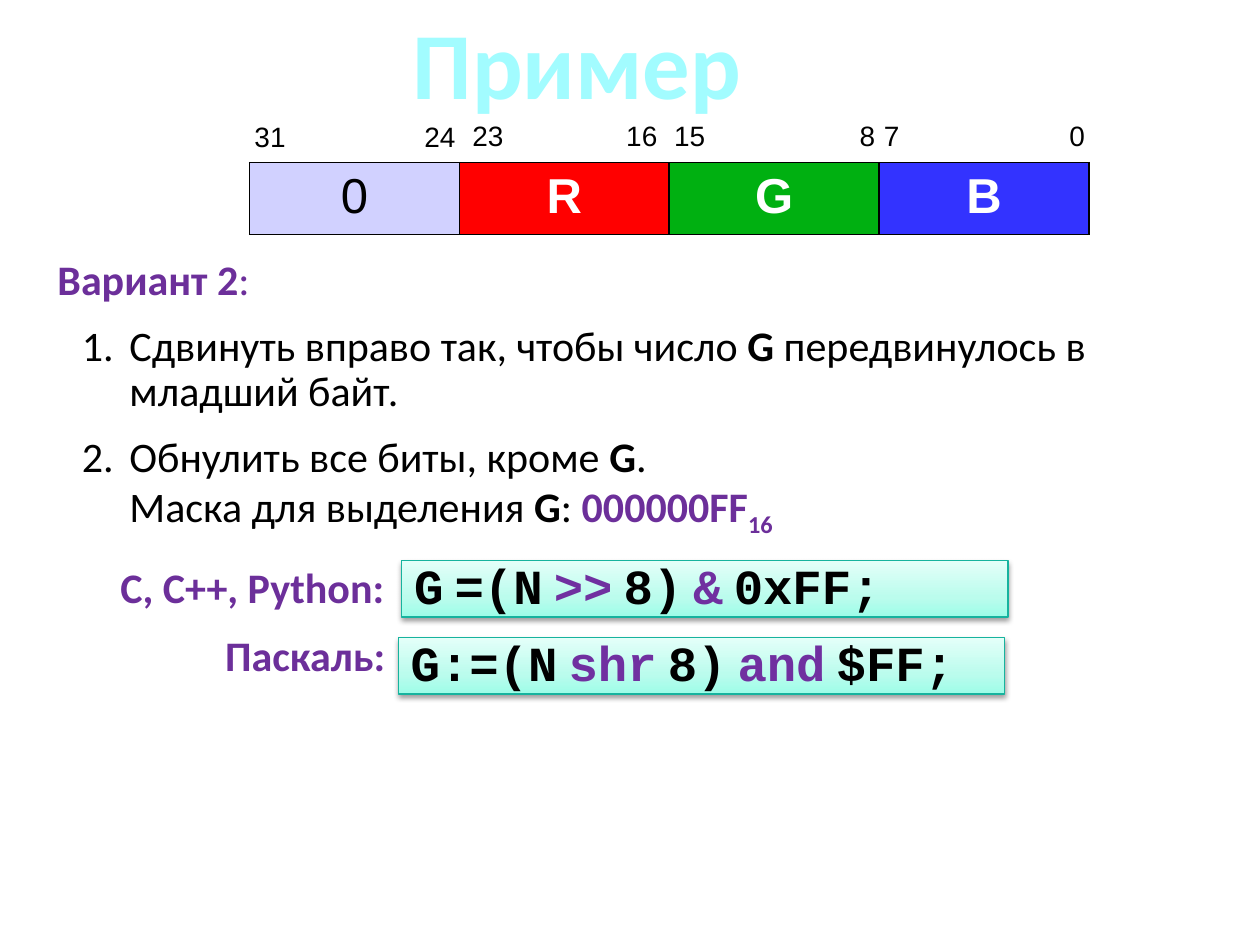
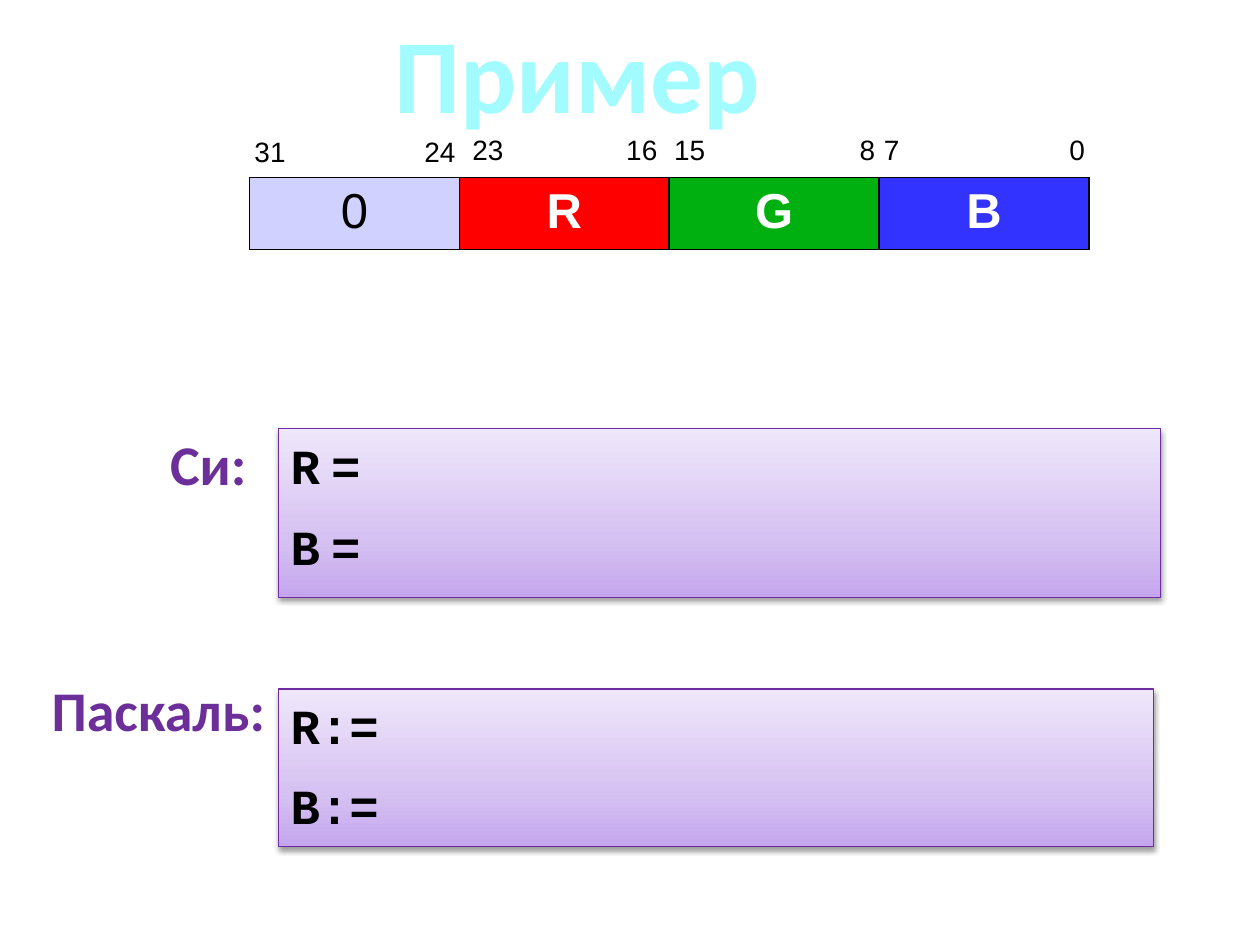
"""Two slides on extracting colour bytes from a 32-bit number."""
from dataclasses import dataclass

from lxml import etree
from pptx import Presentation
from pptx.dml.color import RGBColor
from pptx.enum.shapes import MSO_SHAPE as Preset
from pptx.enum.text import MSO_ANCHOR as Anchor, PP_ALIGN as Align
from pptx.oxml import parse_xml
from pptx.oxml.ns import nsdecls, qn
from pptx.util import Cm, Pt

COLORS = {
    "ink": "000000",
    "white": "FFFFFF",
    "heading": "6C2F9A",
    "operator": "7030A0",
    "title_edge": "3DBDC0",
    "unused": "D1D1FF",
    "red": "FF0000",
    "green": "00B011",
    "blue": "3333FF",
    "teal_edge": "16B39E",
    "violet_edge": "6E2C9F",
}
TITLE_STOPS = [(0, "BBFCFE"), (9, "A2FCFF"), (50, "008285"), (79, "A2FCFF"), (100, "BBFCFE")]
TEAL_STOPS = [(0, "9DFDE8"), (35, "BBFCED"), (100, "E4FFF9")]
VIOLET_STOPS = [(0, "C5A6EE"), (35, "D6C2F2"), (100, "EFE7FB")]
OPERATORS = {">>", "&", "shr", "and"}
PLAIN_TABLE = "{2D5ABB26-0587-4C30-8999-92F81FD0307C}"
BYTE_WIDTH = 4.23


@dataclass(frozen=True)
class Area:
    left: float
    top: float
    width: float
    height: float

    def lengths(self) -> tuple:
        return Cm(self.left), Cm(self.top), Cm(self.width), Cm(self.height)


@dataclass(frozen=True)
class ByteField:
    letter: str
    fill: str
    high: str
    low: str
    inset: float = 0.08


@dataclass(frozen=True)
class Label:
    text: str
    area: Area
    size: int
    align: Align


@dataclass(frozen=True)
class Code:
    lines: tuple
    area: Area
    stops: list
    edge: str
    anchor: Anchor = Anchor.TOP
    pad: float = 0.13
    gap: float = 0
    spacing: float = 0.9


FIELDS = [
    ByteField("0", "unused", "31", "24"),
    ByteField("R", "red", "23", "16", 0.24),
    ByteField("G", "green", "15", "8"),
    ByteField("B", "blue", "7", "0"),
]


def gradient(stops: list, degrees: int) -> etree._Element:
    """Return a linear gradient fill."""
    marks = "".join(
        f'<a:gs pos="{place * 1000}"><a:srgbClr val="{color}"/></a:gs>' for place, color in stops
    )
    return parse_xml(
        f'<a:gradFill {nsdecls("a")} rotWithShape="1"><a:gsLst>{marks}</a:gsLst>'
        f'<a:lin ang="{degrees * 60000}" scaled="0"/></a:gradFill>'
    )


def add_run(paragraph, text: str, size: float, color: str = "ink", bold: bool = False,
            face: str = "Calibri"):
    """Append one formatted run."""
    run = paragraph.add_run()
    run.text = text
    run.font.size = Pt(size)
    run.font.bold = bold
    run.font.name = face
    run.font.color.rgb = RGBColor.from_string(COLORS[color])
    return run


def add_text_frame(slide, area: Area, wrap: bool = True):
    """Add a text box and return its frame."""
    frame = slide.shapes.add_textbox(*area.lengths()).text_frame
    frame.word_wrap = wrap
    return frame


def add_title(slide, top: float, size: int) -> None:
    """Draw the outlined gradient title."""
    frame = add_text_frame(slide, Area(0, top, 23.27, 1.32))
    frame.vertical_anchor = Anchor.MIDDLE
    heading = frame.paragraphs[0]
    heading.alignment = Align.CENTER
    props = add_run(heading, "Пример", size, bold=True).font._element
    props.replace(props.find(qn("a:solidFill")), gradient(TITLE_STOPS, 90))
    props.insert(0, parse_xml(
        f'<a:ln {nsdecls("a")} w="{Pt(0.83)}"><a:solidFill>'
        f'<a:srgbClr val="{COLORS["title_edge"]}"/></a:solidFill></a:ln>'
    ))


def add_byte_row(slide, left: float, top: float, height: float):
    """Add an unstyled one-row table with a column for each byte."""
    row = Area(left, top, BYTE_WIDTH * len(FIELDS), height)
    table = slide.shapes.add_table(1, len(FIELDS), *row.lengths()).table
    table.first_row = table.horz_banding = False
    table._tbl.tblPr.find(qn("a:tableStyleId")).text = PLAIN_TABLE
    for column in table.columns:
        column.width = Cm(BYTE_WIDTH)
    return table


def outline_cell(cell) -> None:
    """Give a cell a thin black border on every side."""
    props = cell._tc.get_or_add_tcPr()
    for position, side in enumerate(("lnL", "lnR", "lnT", "lnB")):
        props.insert(position, parse_xml(
            f'<a:{side} {nsdecls("a")} w="{Pt(1)}"><a:solidFill>'
            f'<a:srgbClr val="{COLORS["ink"]}"/></a:solidFill></a:{side}>'
        ))


def add_byte_layout(slide, top: float) -> None:
    """Draw the coloured bytes and the bit numbers above them."""
    letters = add_byte_row(slide, 5.03, top, 1.45)
    numbers = add_byte_row(slide, 5.05, top - 0.97, 0.94)
    for index, field in enumerate(FIELDS):
        cell = letters.cell(0, index)
        cell.fill.solid()
        cell.fill.fore_color.rgb = RGBColor.from_string(COLORS[field.fill])
        outline_cell(cell)
        letter = cell.text_frame.paragraphs[0]
        letter.alignment = Align.CENTER
        colored = field.fill != "unused"
        add_run(letter, field.letter, 28, "white" if colored else "ink", colored, "Arial")

        cell = numbers.cell(0, index)
        cell.fill.background()
        cell.margin_left = cell.margin_right = Cm(field.inset)
        cell.vertical_anchor = Anchor.TOP if index else Anchor.MIDDLE
        bits = cell.text_frame.paragraphs[0]
        edge = Cm(BYTE_WIDTH - 2 * field.inset - 0.02)
        bits._p.get_or_add_pPr().append(parse_xml(
            f'<a:tabLst {nsdecls("a")}><a:tab pos="{edge}" algn="r"/></a:tabLst>'
        ))
        for part in (field.high, "\t", field.low):
            add_run(bits, part, 16, face="Arial")


def add_label(slide, label: Label) -> None:
    """Draw the name of a language."""
    name = add_text_frame(slide, label.area, wrap=False).paragraphs[0]
    name.alignment = label.align
    add_run(name, label.text, label.size, "heading", True)


def add_code(slide, code: Code) -> None:
    """Draw a shaded panel with lines of code."""
    panel = slide.shapes.add_shape(Preset.RECTANGLE, *code.area.lengths())
    panel.line.color.rgb = RGBColor.from_string(COLORS[code.edge])
    panel.line.width = Pt(0.75)
    props = panel._element.spPr
    props.insert(2, gradient(code.stops, 270))
    props.append(parse_xml(
        f'<a:effectLst {nsdecls("a")}><a:outerShdw blurRad="{Pt(3.1)}" dist="{Pt(1.6)}" '
        f'dir="5400000" rotWithShape="0"><a:srgbClr val="{COLORS["ink"]}">'
        '<a:alpha val="38000"/></a:srgbClr></a:outerShdw></a:effectLst>'
    ))
    frame = panel.text_frame
    frame.word_wrap = False
    frame.vertical_anchor = code.anchor
    frame.margin_top = Cm(code.pad)
    for index, line in enumerate(code.lines):
        statement = frame.add_paragraph() if index else frame.paragraphs[0]
        statement.alignment = Align.LEFT
        statement.line_spacing = code.spacing
        statement.space_before = Pt(code.gap if index else 0)
        for place, word in enumerate(line.split()):
            if place:
                add_run(statement, " ", 28, bold=True)
            color = "operator" if word in OPERATORS else "ink"
            add_run(statement, word, 28, color, True, "Courier New")


def add_steps(slide) -> None:
    """Write the heading and the numbered steps of the solution."""
    frame = add_text_frame(slide, Area(0.91, 5.11, 23.47, 5.97))
    heading = frame.paragraphs[0]
    heading.line_spacing = 0.9
    add_run(heading, "Вариант 2", 24, "heading", True)
    add_run(heading, ":", 24, "heading")

    shift, mask = frame.add_paragraph(), frame.add_paragraph()
    for step in (shift, mask):
        step.line_spacing = 0.9
        step.space_before = Pt(11.5)
        props = step._p.get_or_add_pPr()
        props.set("marL", str(Cm(1.45)))
        props.set("indent", str(Cm(-0.96)))
        props.append(parse_xml(f'<a:buAutoNum {nsdecls("a")} type="arabicPeriod"/>'))
    add_run(shift, "Сдвинуть вправо так, чтобы число ", 24)
    add_run(shift, "G ", 24, bold=True)
    add_run(shift, "передвинулось в младший байт.", 24)
    add_run(mask, "Обнулить все биты, кроме ", 24)
    add_run(mask, "G", 24, bold=True)
    add_run(mask, ".", 24)
    mask.add_line_break()
    add_run(mask, "Маска для выделения ", 24)
    add_run(mask, "G", 24, bold=True)
    add_run(mask, ": ", 24)
    add_run(mask, "000000FF", 24, "heading", True)
    base = add_run(mask, "16", 24, "heading", True)
    base.font._element.set("baseline", "-25000")


def add_example(deck, title_top: float, title_size: int, bytes_top: float,
                labels: list, codes: list):
    """Add a slide with the title, the byte layout and the code samples."""
    slide = deck.slides.add_slide(deck.slide_layouts[6])
    add_title(slide, title_top, title_size)
    add_byte_layout(slide, bytes_top)
    for label, code in zip(labels, codes):
        add_label(slide, label)
        add_code(slide, code)
    return slide


def main() -> None:
    """Build and save the deck."""
    deck = Presentation()
    deck.slide_width, deck.slide_height = Cm(25.4), Cm(19.05)

    solution = add_example(
        deck, 0.58, 54, 3.28,
        [
            Label("С, C++, Python:", Area(2.11, 11.2, 5.89, 1.27), 24, Align.RIGHT),
            Label("Паскаль:", Area(4.24, 12.57, 3.78, 1.27), 24, Align.RIGHT),
        ],
        [
            Code(("G =(N >> 8) & 0xFF;",), Area(8.1, 11.3, 12.22, 1.14),
                 TEAL_STOPS, "teal_edge", Anchor.MIDDLE),
            Code(("G:=(N shr 8) and $FF;",), Area(8.03, 12.85, 12.22, 1.14),
                 TEAL_STOPS, "teal_edge", Anchor.MIDDLE),
        ],
    )
    add_steps(solution)

    add_example(
        deck, 0.79, 60, 3.58,
        [
            Label("Си:", Area(3.18, 8.53, 2.08, 1.63), 32, Align.LEFT),
            Label("Паскаль:", Area(0.79, 13.49, 4.85, 1.63), 32, Align.LEFT),
        ],
        [
            Code(("R =", "B ="), Area(5.61, 8.64, 17.78, 3.4),
                 VIOLET_STOPS, "violet_edge", gap=13, spacing=1),
            Code(("R:=", "B:="), Area(5.61, 13.89, 17.65, 3.18),
                 VIOLET_STOPS, "violet_edge", pad=0.27, gap=15.5),
        ],
    )
    deck.save("out.pptx")


if __name__ == "__main__":
    main()
